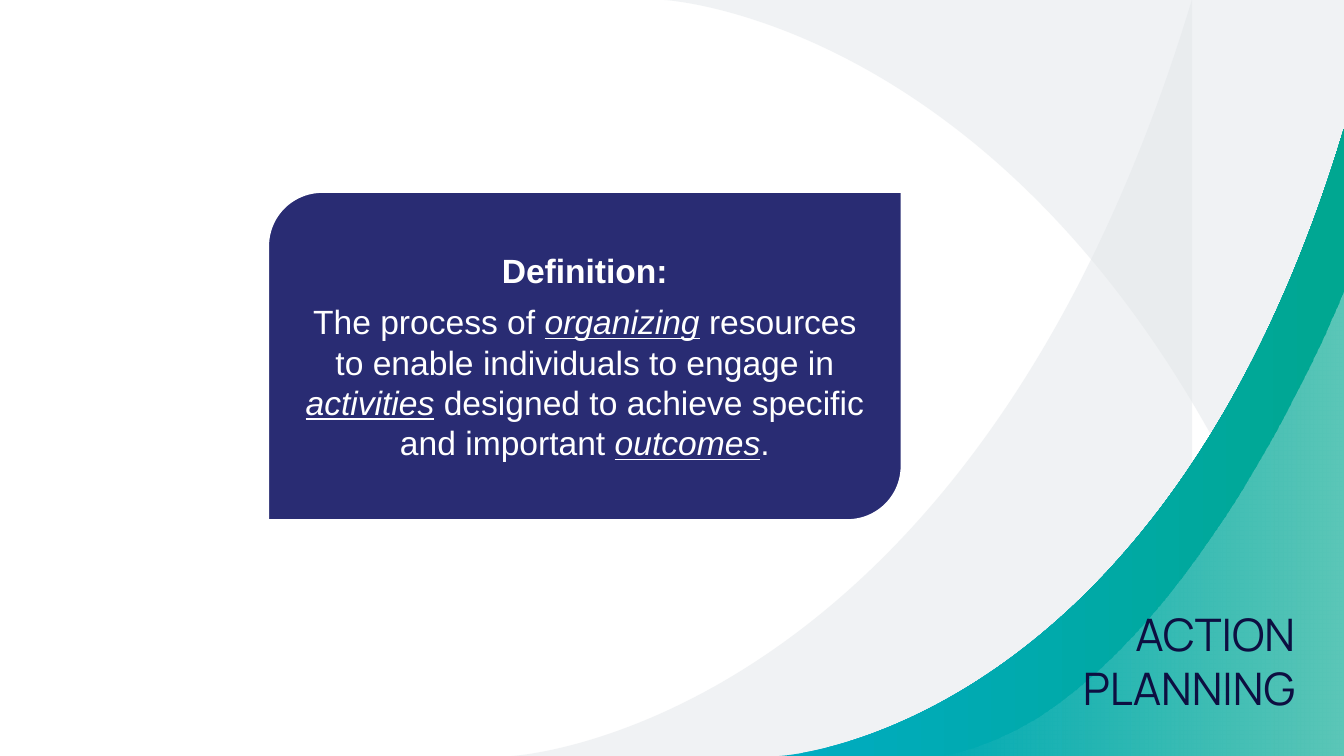
from lxml import etree
from pptx import Presentation
from pptx import util as u
from pptx.dml.color import RGBColor
from pptx.enum import shapes, text
from pptx.oxml.ns import qn

HUES = {"mist": "E3E7EA", "cyan": "00ACC2", "green": "00A791",
        "white": "FFFFFF", "ink": "0D0F41", "navy": "292C73"}


class Deck:
    """Holds the style and the current slide; lengths are percent of its size."""

    def __init__(self):
        self.prs = Presentation()
        self.prs.slide_width = u.Inches(10)
        self.prs.slide_height = u.Inches(5.625)
        self.slide = self.prs.slides.add_slide(self.prs.slide_layouts[5])

    def spot(self, x, y):
        return (round(self.prs.slide_width * x / 100),
                round(self.prs.slide_height * y / 100))

    def paint(self, color, hue):
        color.rgb = RGBColor.from_string(HUES[hue])

    def fade(self, shape, shares):
        tags = shape._element.spPr.iter(qn("a:srgbClr"))
        for tag, share in zip(tags, shares):
            if share < 100:
                etree.SubElement(tag, qn("a:alpha")).set("val", str(share * 1000))

    def bend(self, shape, pulls, end):
        line = shape._element.spPr.find(".//" + qn("a:lnTo"))
        curve = etree.Element(qn("a:cubicBezTo"))
        for x, y in (self.spot(*p) for p in pulls + [end]):
            dot = etree.SubElement(curve, qn("a:pt"))
            dot.set("x", str(x - shape.left))
            dot.set("y", str(y - shape.top))
        line.getparent().replace(line, curve)

    def swoop(self, home, curve, corners, hues, shares):
        start, *pulls, end = curve
        pen = home.build_freeform(*self.spot(*start))
        pen.add_line_segments([self.spot(*p) for p in [end] + corners], close=True)
        shape = pen.convert_to_shape()
        self.bend(shape, pulls, end)
        shape.shadow.inherit = False
        shape.line.fill.background()
        if len(hues) == 1:
            shape.fill.solid()
            self.paint(shape.fill.fore_color, hues[0])
        else:
            shape.fill.gradient()
            shape.fill.gradient_angle = 0
            for stop, hue in zip(shape.fill.gradient_stops, hues):
                self.paint(stop.color, hue)
        self.fade(shape, shares)

    def title(self, words, x, y, w, h):
        box = self.slide.shapes.title
        self.slide.shapes._spTree.append(box._element)
        box.left, box.top = self.spot(x, y)
        box.width, box.height = self.spot(w, h)
        frame = box.text_frame
        frame.text = words
        frame.word_wrap = True
        frame.auto_size = text.MSO_AUTO_SIZE.NONE
        frame.vertical_anchor = text.MSO_ANCHOR.BOTTOM
        frame.margin_left = frame.margin_right = u.Inches(0.1)
        frame.margin_top = frame.margin_bottom = u.Inches(0.1)
        para = frame.paragraphs[0]
        para.alignment = text.PP_ALIGN.RIGHT
        self.style(para.runs[0].font, "Manrope", 24, "ink")

    def style(self, font, name, size, hue):
        font.name, font.size = name, u.Pt(size)
        self.paint(font.color, hue)

    def card(self, head, parts, x, y, w, h):
        box = self.slide.shapes.add_shape(
            shapes.MSO_SHAPE.ROUND_2_DIAG_RECTANGLE, *self.spot(x, y), *self.spot(w, h))
        box.shadow.inherit = False
        box.fill.solid()
        self.paint(box.fill.fore_color, "navy")
        self.paint(box.line.color, "white")
        box.line.width = u.Pt(2.25)
        frame = box.text_frame
        frame.word_wrap = True
        frame.vertical_anchor = text.MSO_ANCHOR.MIDDLE
        frame.text = head
        frame.paragraphs[0].runs[0].font.bold = True
        body = frame.add_paragraph()
        body.space_before = u.Pt(6)
        for k, part in enumerate(parts):
            run = body.add_run()
            run.text = part
            run.font.italic = run.font.underline = k % 2 == 1
        for para in frame.paragraphs:
            para.alignment = text.PP_ALIGN.CENTER
            for run in para.runs:
                self.style(run.font, "Arial", 18, "white")


def main():
    deck = Deck()
    page = deck.slide.shapes
    deck.swoop(page, [(100, 100), (83.6, 3.2), (49.4, 0), (49.4, 0)],
               [(100, 0), (100, 100)], ["mist"], [51])
    waves = page.add_group_shape().shapes
    deck.swoop(waves, [(88.7, -0.1), (72.3, 96.8), (38.1, 100), (38.1, 100)],
               [(88.7, 100), (88.7, -0.1)], ["mist"], [51])
    deck.swoop(waves, [(58, 100), (58, 100), (86.4, 97.4), (100, 17)],
               [(100, 100)], ["cyan", "green"], [100, 100])
    deck.swoop(waves, [(100, 38.6), (100, 38.6), (87, 96.4), (69.3, 100)],
               [(100, 100)], ["white", "white"], [0, 36])
    deck.title("ACTION PLANNING", 73.87, 43.5, 23.5, 52.8)
    deck.card("Definition:",
              ["The process of ", "organizing",
               " resources to enable individuals to engage in ", "activities",
               " designed to achieve specific and important ", "outcomes", "."],
              19.87, 25.25, 47.3, 43.7)
    deck.prs.save("out.pptx")


if __name__ == "__main__":
    main()
